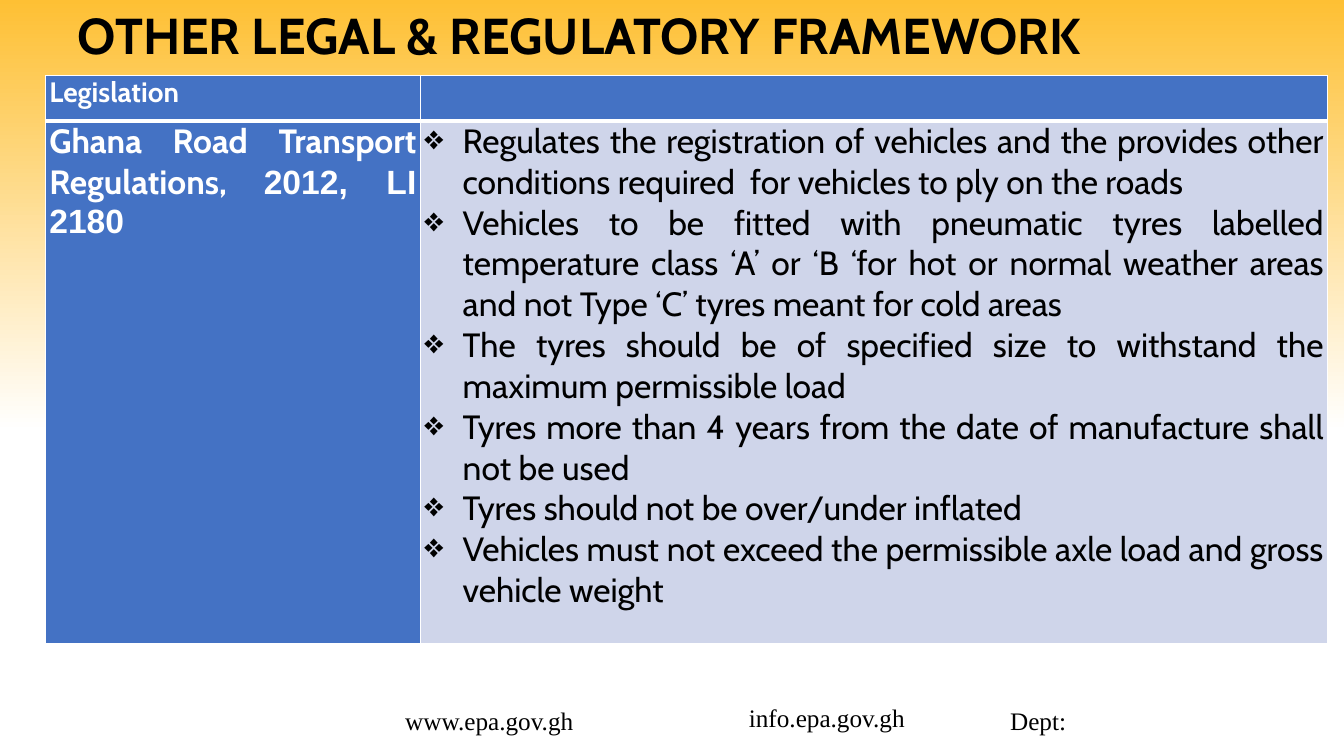
import pptx
import pptx.dml.color
import pptx.enum.text
import pptx.oxml
import pptx.oxml.ns
import pptx.util

WIDTH, HEIGHT = 13.33, 7.5
WHITE, BLACK, BLUE, PALE_BLUE, AMBER = "FFFFFF", "000000", "4472C4", "CFD5EA", "FEC034"
COLUMNS = (3.72, 9)
ROWS = (0.45, 5.19)
INDENT = 0.38
DUTIES = (
    "Regulates the registration of vehicles and the provides other conditions required  for vehicles to ply on the roads",
    "Vehicles to be fitted with pneumatic tyres labelled temperature class ‘A’ or ‘B ‘for hot or normal weather areas and not Type ‘C’ tyres meant for cold areas",
    "The tyres should be of specified size to withstand the maximum permissible load",
    "Tyres more than 4 years from the date of manufacture shall not be used",
    "Tyres should not be over/under inflated",
    "Vehicles must not exceed the permissible axle load and gross vehicle weight",
)
FOOTERS = (
    ("www.epa.gov.gh", 3.92, 6.95, 2.17),
    ("info.epa.gov.gh", 7.33, 6.92, 2),
    ("Dept:", 9.92, 6.95, 2.5),
)


def color(value):
    return pptx.dml.color.RGBColor.from_string(value)


def inches(*lengths):
    return [pptx.util.Inches(length) for length in lengths]


def add_run(paragraph, text, size, font, fill, bold=False):
    run = paragraph.add_run()
    run.text = text
    run.font.size = pptx.util.Pt(size)
    run.font.name = font
    run.font.bold = bold
    run.font.color.rgb = color(fill)


def add_label(slide, box, text, size, font, bold=False):
    frame = slide.shapes.add_textbox(*inches(*box)).text_frame
    frame.word_wrap = True
    add_run(frame.paragraphs[0], text, size, font, BLACK, bold)
    return frame


def paint_background(slide):
    fill = slide.background.fill
    fill.gradient()
    fill.gradient_angle = 270
    for stop, position, value in zip(fill.gradient_stops, (0, 0.57), (AMBER, WHITE)):
        stop.position = position
        stop.color.rgb = color(value)


def style_cell(cell, fill, top, bottom):
    cell.margin_left = cell.margin_right = pptx.util.Inches(0.04)
    cell.margin_top = cell.margin_bottom = 0
    properties = cell._tc.get_or_add_tcPr()
    for side, width in (("L", 1), ("R", 1), ("T", top), ("B", bottom)):
        properties.append(pptx.oxml.parse_xml(
            f'<a:ln{side} {pptx.oxml.ns.nsdecls("a")} w="{pptx.util.Pt(width)}">'
            f'<a:solidFill><a:srgbClr val="{WHITE}"/></a:solidFill></a:ln{side}>'))
    cell.fill.solid()
    cell.fill.fore_color.rgb = color(fill)


def justify(paragraph):
    paragraph.alignment = pptx.enum.text.PP_ALIGN.JUSTIFY
    return paragraph


def add_bullet(paragraph):
    properties = paragraph._p.get_or_add_pPr()
    margin = pptx.util.Inches(INDENT)
    properties.set("marL", str(margin))
    properties.set("indent", str(-margin))
    properties.append(pptx.oxml.parse_xml(
        f'<a:buChar {pptx.oxml.ns.nsdecls("a")} char="❖"/>'))


def add_legislation_table(slide):
    box = inches(0.45, 0.75, sum(COLUMNS), sum(ROWS))
    table = slide.shapes.add_table(len(ROWS), len(COLUMNS), *box).table
    table.horz_banding = False
    for column, width in zip(table.columns, inches(*COLUMNS)):
        column.width = width
    for row, height in zip(table.rows, inches(*ROWS)):
        row.height = height
    for index, fills in enumerate(((BLUE, BLUE), (BLUE, PALE_BLUE))):
        top, bottom = ((1, 3), (3, 1))[index]
        for cell, fill in zip(table.rows[index].cells, fills):
            style_cell(cell, fill, top, bottom)

    heading = justify(table.cell(0, 0).text_frame.paragraphs[0])
    add_run(heading, "Legislation", 20, "Cabin", WHITE, True)
    law = justify(table.cell(1, 0).text_frame.paragraphs[0])
    add_run(law, "Ghana Road Transport Regulations, ", 24, "Cabin", WHITE, True)
    add_run(law, "2012, LI 2180", 24, "Arial", WHITE, True)
    frame = table.cell(1, 1).text_frame
    for index, duty in enumerate(DUTIES):
        paragraph = justify(frame.add_paragraph() if index else frame.paragraphs[0])
        add_bullet(paragraph)
        add_run(paragraph, duty, 24, "Cabin", BLACK)


def main():
    presentation = pptx.Presentation()
    presentation.slide_width, presentation.slide_height = inches(WIDTH, HEIGHT)
    slide = presentation.slides.add_slide(presentation.slide_layouts[6])
    paint_background(slide)
    for text, left, top, width in FOOTERS:
        add_label(slide, (left, top, width, 0.4), text, 18, "Times New Roman")
    add_legislation_table(slide)
    title = add_label(slide, (0.67, 0, 12.25, 0.75),
                      "OTHER LEGAL & REGULATORY FRAMEWORK", 36, "Cabin", True)
    title.vertical_anchor = pptx.enum.text.MSO_ANCHOR.MIDDLE
    title.paragraphs[0].line_spacing = 0.9
    presentation.save("out.pptx")


if __name__ == "__main__":
    main()
